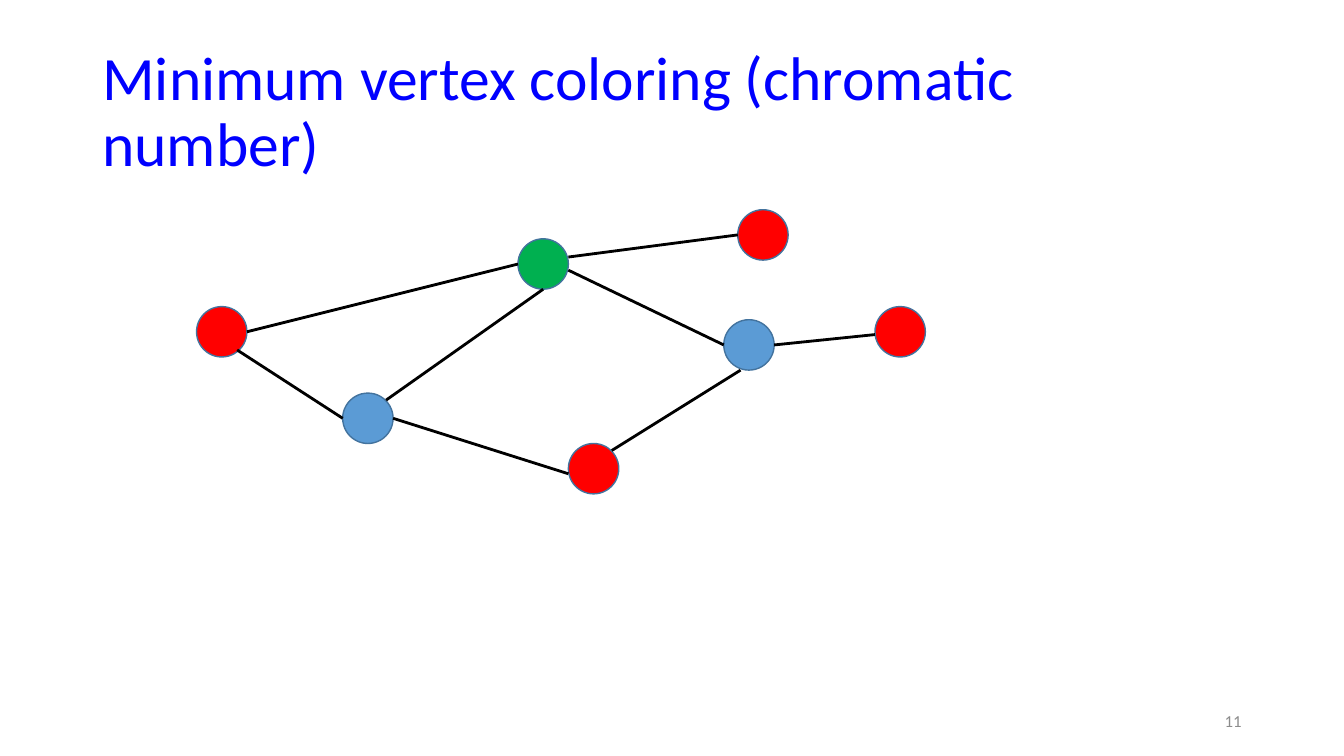
import pptx
import pptx.util
import pptx.dml.color
import pptx.enum.shapes
import pptx.enum.text
from lxml import etree

Pt = pptx.util.Pt
COLORS = {
    "title": "0000FF", "number": "8C8C8C", "edge": "000000", "outline": "43739E",
    "red": "FF0000", "blue": "5B9BD5", "green": "00B050",
}
DIAMETER = 36
RADIUS = DIAMETER / 2


def rgb(name):
    return pptx.dml.color.RGBColor.from_string(COLORS[name])


def add_label(text, box, size, color, align):
    label = slide.shapes.add_textbox(*[Pt(length) for length in box])
    frame = label.text_frame
    frame.word_wrap = True
    frame.vertical_anchor = pptx.enum.text.MSO_ANCHOR.MIDDLE
    paragraph = frame.paragraphs[0]
    paragraph.alignment = align
    run = paragraph.add_run()
    run.text = text
    run.font.name = "Calibri"
    run.font.size = Pt(size)
    run.font.color.rgb = rgb(color)
    return paragraph


deck = pptx.Presentation()
deck.slide_width, deck.slide_height = Pt(960), Pt(540)
slide = deck.slides.add_slide(deck.slide_layouts[6])

# Title
title = add_label("Minimum vertex coloring (chromatic number)",
                  (66, 28.8, 828, 104.4), 44, "title", pptx.enum.text.PP_ALIGN.LEFT)
title.line_spacing = 0.9

# Vertices: centre and colour class
vertices = {
    "west": (158.4, 237, "red"),
    "east": (535, 246.4, "blue"),
    "southwest": (262.8, 298.8, "blue"),
    "south": (424, 334.8, "red"),
    "north": (388, 188.6, "green"),
    "far east": (643, 237, "red"),
    "northeast": (545, 167.8, "red"),
}
for x, y, color in vertices.values():
    vertex = slide.shapes.add_shape(
        pptx.enum.shapes.MSO_SHAPE.OVAL,
        Pt(x - RADIUS), Pt(y - RADIUS), Pt(DIAMETER), Pt(DIAMETER))
    vertex.shadow.inherit = False
    vertex.fill.solid()
    vertex.fill.fore_color.rgb = rgb(color)
    vertex.line.color.rgb = rgb("outline")
    vertex.line.width = Pt(1)

# Edges: each end is a vertex and an offset from its centre
edges = [
    ("west", (RADIUS, 0), "north", (-RADIUS, 0)),
    ("west", (11, 13), "southwest", (-RADIUS, 0)),
    ("southwest", (13, -13), "north", (0, RADIUS)),
    ("southwest", (RADIUS, 0), "south", (-RADIUS, 3.6)),
    ("north", (RADIUS, 4.4), "east", (-RADIUS, 0)),
    ("south", (13, -13), "east", (-6, RADIUS)),
    ("east", (RADIUS, 0), "far east", (-RADIUS, 2)),
    ("north", (RADIUS, -5), "northeast", (-RADIUS, 0)),
]
for start, start_offset, end, end_offset in edges:
    edge = slide.shapes.add_connector(
        pptx.enum.shapes.MSO_CONNECTOR.STRAIGHT,
        Pt(vertices[start][0] + start_offset[0]), Pt(vertices[start][1] + start_offset[1]),
        Pt(vertices[end][0] + end_offset[0]), Pt(vertices[end][1] + end_offset[1]))
    edge.line.color.rgb = rgb("edge")
    edge.line.width = Pt(2)
    etree.SubElement(edge._element.spPr,
                     "{http://schemas.openxmlformats.org/drawingml/2006/main}effectLst")

# Slide number
add_label("11", (678, 500.5, 216, 28.75), 12, "number", pptx.enum.text.PP_ALIGN.RIGHT)

deck.save("out.pptx")
